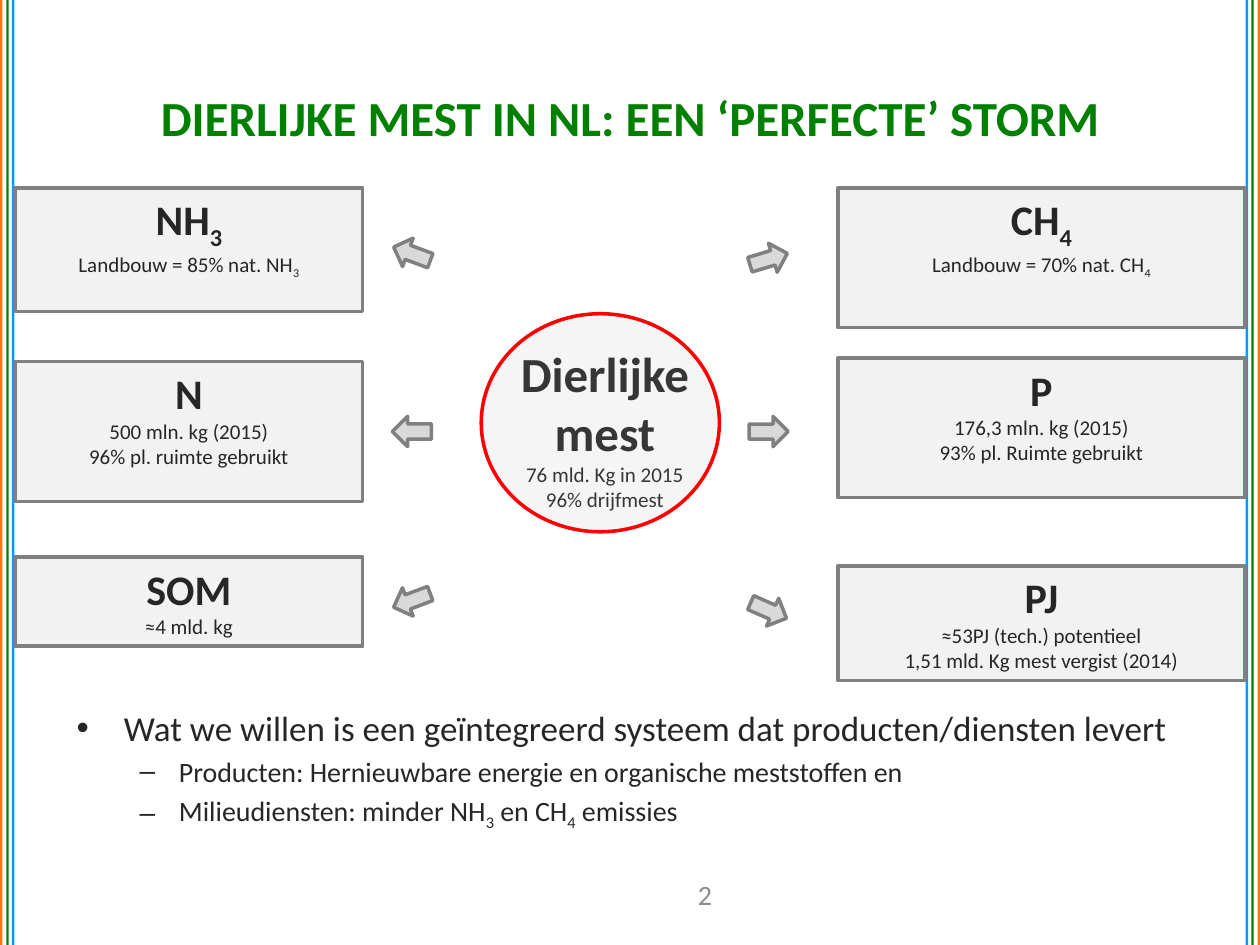
from pptx import Presentation
from pptx.dml.color import RGBColor
from pptx.enum.shapes import MSO_SHAPE as Form
from pptx.enum.text import MSO_ANCHOR as Anchor, PP_ALIGN as Align
from pptx.oxml.ns import qn
from pptx.util import Pt
from lxml.etree import SubElement

COLORS = {
    "orange": "F67616", "green": "008000", "blue": "0099FF", "panel": "F2F2F2",
    "edge": "808080", "arrow": "D9D9D9", "ink": "262626", "number": "8C8C8C",
    "white": "FFFFFF", "black": "000000", "red": "FF0000",
}
WIDTH, HEIGHT = 720, 540


def color(name):
    return RGBColor.from_string(COLORS[name])


def write(para, text, size=12, ink="ink", bold=False, align=Align.CENTER, font="Calibri"):
    """Fill a paragraph; parts between tildes become subscripts."""
    para.alignment = align
    for index, part in enumerate(text.split("~")):
        if not part:
            continue
        span = para.add_run()
        span.text = part
        span.font.name, span.font.size, span.font.bold = font, Pt(size), bold
        span.font.color.rgb = color(ink)
        if index % 2:
            span.font._element.set("baseline", "-25000")


class Sheet:
    def __init__(self, page):
        self.page = page
        self.line_width = 2

    def shape(self, form, left, top, width, height, fill, line=None, turn=0, alpha=None):
        item = self.page.shapes.add_shape(form, Pt(left), Pt(top), Pt(width), Pt(height))
        item.shadow.inherit = False
        item.rotation = turn
        item.fill.solid()
        item.fill.fore_color.rgb = color(fill)
        if alpha:
            tint = item._element.spPr.find(qn("a:solidFill"))[0]
            SubElement(tint, qn("a:alpha"), val=str(alpha * 1000))
        if line:
            item.line.color.rgb = color(line)
            item.line.width = Pt(self.line_width)
        else:
            item.line.fill.background()
        return item

    def panel(self, left, top, width, height, heading, *details,
              fill="panel", line="edge", size=24, ink="ink"):
        frame = self.shape(Form.RECTANGLE, left, top, width, height, fill, line).text_frame
        frame.word_wrap = True
        frame.vertical_anchor = Anchor.TOP
        write(frame.paragraphs[0], heading, size=size, ink=ink, bold=True)
        for detail in details:
            write(frame.add_paragraph(), detail, ink=ink)

    def arrow(self, center_x, center_y, turn, width=17.3, height=22.3):
        self.shape(Form.DOWN_ARROW, center_x - width / 2, center_y - height / 2,
                   width, height, "arrow", "edge", turn)

    def text(self, left, top, width, height, anchor=Anchor.MIDDLE):
        box = self.page.shapes.add_textbox(Pt(left), Pt(top), Pt(width), Pt(height))
        frame = box.text_frame
        frame.word_wrap = True
        frame.vertical_anchor = anchor
        return frame

    def bullet(self, para, text, size, mark, margin, indent):
        props = para._p.get_or_add_pPr()
        props.set("marL", str(Pt(margin)))
        props.set("indent", str(Pt(-indent)))
        SubElement(props, qn("a:buFont"), typeface="Arial")
        SubElement(props, qn("a:buChar"), char=mark)
        write(para, text, size=size, align=Align.LEFT)


def main():
    deck = Presentation()
    deck.slide_width, deck.slide_height = Pt(WIDTH), Pt(HEIGHT)
    sheet = Sheet(deck.slides.add_slide(deck.slide_layouts[6]))

    stripe = 1.4
    for offset, name in ((0, "orange"), (3.6, "green"), (6.8, "blue")):
        for left in (offset, WIDTH - offset - stripe):
            sheet.shape(Form.RECTANGLE, left, 0, stripe, HEIGHT, name)

    write(sheet.text(36, 21.6, 648, 90).paragraphs[0],
          "DIERLIJKE MEST IN NL: EEN ‘PERFECTE’ STORM", size=28, ink="green", bold=True)
    write(sheet.text(371.5, 496.8, 62.6, 28.8).paragraphs[0], "2", size=16, ink="number")

    columns = (
        (8.6, 198.7, (
            (107.3, 70.6, "NH~3~", "Landbouw = 85% nat. NH~3~"),
            (206.6, 79.9, "N", "500 mln. kg (2015)", "96% pl. ruimte gebruikt"),
            (318.2, 51.1, "SOM", "≈4 mld. kg"))),
        (478.8, 232.6, (
            (107.3, 79.9, "CH~4~", "Landbouw = 70% nat. CH~4~"),
            (204.5, 79.9, "P", "176,3 mln. kg (2015)", "93% pl. Ruimte gebruikt"),
            (323.3, 65.5, "PJ", "≈53PJ (tech.) potentieel",
             "1,51 mld. Kg mest vergist (2014)"))),
    )
    for left, width, panels in columns:
        for top, height, *lines in panels:
            sheet.panel(left, top, width, height, *lines)

    sheet.panel(263.5, 193, 164.2, 104.4, "Dierlijke mest", "76 mld. Kg in 2015",
                "96% drijfmest", fill="white", line=None, size=28, ink="black")
    arrows = (
        (235.4, ((145.1, 110.5), (246.6, 90), (343.1, 69.4))),
        (439.2, ((148, 253.2), (246.6, 270), (348.8, 293.6))),
    )
    for center_x, turns in arrows:
        for center_y, turn in turns:
            sheet.arrow(center_x, center_y, turn)
    sheet.shape(Form.OVAL, 275, 179.3, 136.1, 124.6, "arrow", "red", alpha=25)

    body = sheet.text(36.7, 400.3, 648, 51.1, Anchor.TOP)
    sheet.bullet(body.paragraphs[0],
                 "Wat we willen is een geïntegreerd systeem dat producten/diensten levert",
                 20, "•", 27, 27)
    for text in ("Producten: Hernieuwbare energie en organische meststoffen en",
                 "Milieudiensten: minder NH~3~ en CH~4~ emissies"):
        para = body.add_paragraph()
        para.level = 1
        para.space_before = Pt(3.2)
        sheet.bullet(para, text, 16, "–", 58.5, 22.5)

    deck.save("out.pptx")


if __name__ == "__main__":
    main()
